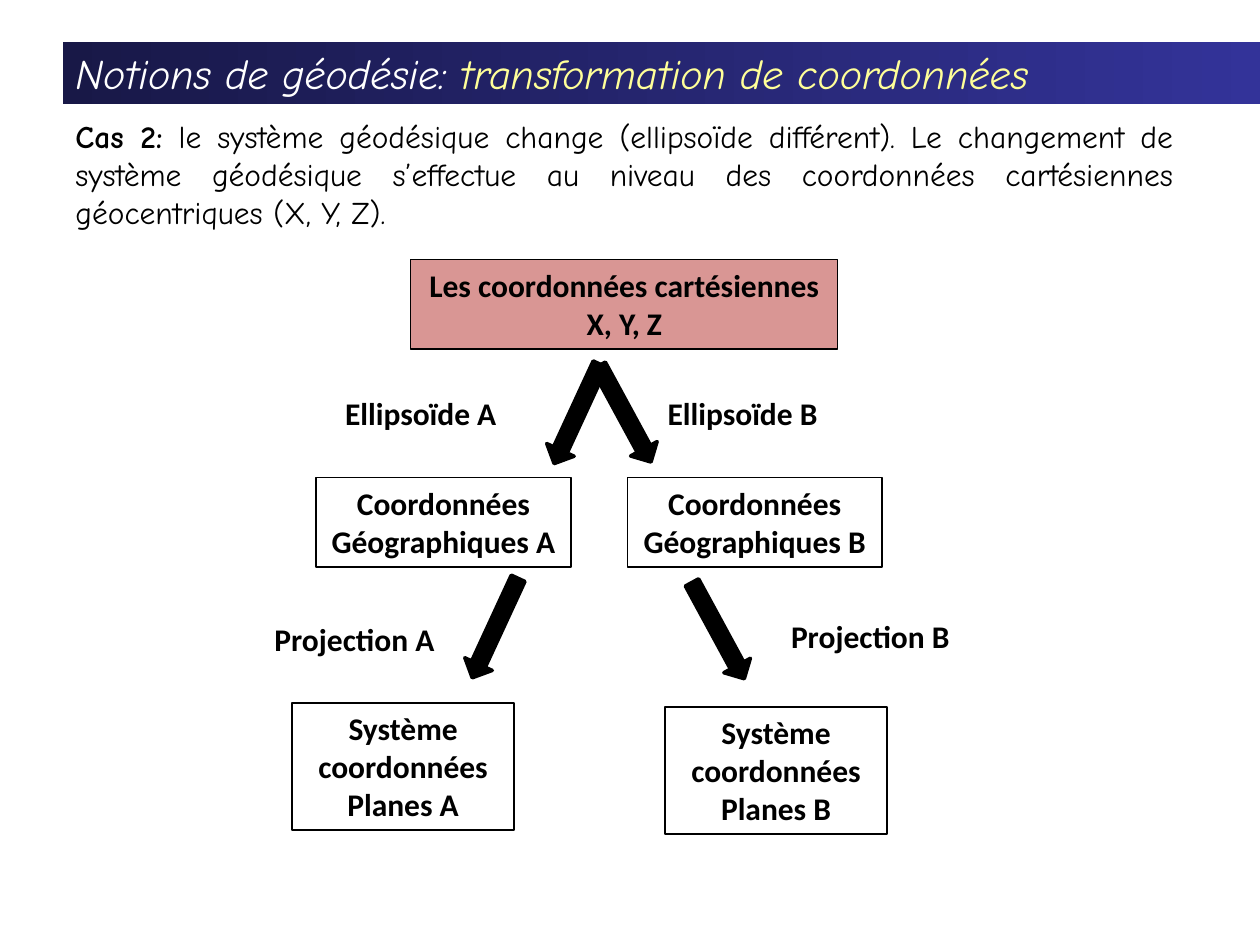
from dataclasses import dataclass

from pptx import Presentation
from pptx.dml.color import RGBColor
from pptx.enum.shapes import MSO_SHAPE
from pptx.enum.text import MSO_ANCHOR, MSO_AUTO_SIZE, PP_ALIGN
from pptx.util import Inches, Pt

RECTANGLE = MSO_SHAPE.RECTANGLE
DOWN_ARROW = MSO_SHAPE.DOWN_ARROW
TOP = MSO_ANCHOR.TOP
FIT_SHAPE = MSO_AUTO_SIZE.SHAPE_TO_FIT_TEXT
LEFT, CENTER, JUSTIFY = PP_ALIGN.LEFT, PP_ALIGN.CENTER, PP_ALIGN.JUSTIFY

COLORS = {
    "black": "000000",
    "white": "FFFFFF",
    "yellow": "FFFF99",
    "rose": "D99694",
    "navy": "181847",
    "indigo": "333399",
}
DIAGRAM_FONT = "Calibri"
COURSE_FONT = "Comic Neue"


@dataclass
class Span:
    text: str
    size: float = 18
    font: str = DIAGRAM_FONT
    color: str = "black"
    bold: bool = False
    italic: bool = False


@dataclass
class Box:
    left: float
    top: float
    width: float
    height: float
    lines: list[str]
    fill: str | None = None
    border: float = 1


@dataclass
class Label:
    left: float
    top: float
    text: str


@dataclass
class Arrow:
    left: float
    top: float
    rotation: float


BOXES = [
    Box(3.26, 2.06, 3.39, 0.71, ["Les coordonnées cartésiennes X, Y, Z"], "rose", 0.75),
    Box(2.51, 3.79, 2.02, 0.71, ["Coordonnées", "Géographiques A"]),
    Box(4.98, 3.79, 2.02, 0.71, ["Coordonnées", "Géographiques B"]),
    Box(2.32, 5.58, 1.76, 1.01, ["Système coordonnées", "Planes A"]),
    Box(5.28, 5.61, 1.76, 1.01, ["Système coordonnées", "Planes B"]),
]
LABELS = [
    Label(2.64, 3.08, "Ellipsoïde A"),
    Label(5.2, 3.08, "Ellipsoïde B"),
    Label(2.08, 4.87, "Projection A"),
    Label(6.18, 4.85, "Projection B"),
]
TOWARDS_A, TOWARDS_B = 24.8, 331.5
ARROWS = [
    Arrow(4.46, 2.85, TOWARDS_A),
    Arrow(4.84, 2.85, TOWARDS_B),
    Arrow(3.81, 4.55, TOWARDS_A),
    Arrow(5.58, 4.57, TOWARDS_B),
]
TITLE = [
    Span("Notions de géodésie: ", 24, COURSE_FONT, "white", italic=True),
    Span("transformation de coordonnées", 24, COURSE_FONT, "yellow", italic=True),
]
INTRODUCTION = [
    Span("Cas 2:", font=COURSE_FONT, bold=True),
    Span(
        " le système géodésique change (ellipsoïde différent). Le changement de "
        "système géodésique s’effectue au niveau des coordonnées cartésiennes "
        "géocentriques (X, Y, Z).",
        font=COURSE_FONT,
    ),
]


def rgb(name: str) -> RGBColor:
    return RGBColor.from_string(COLORS[name])


def write(shape, paragraphs: list[list[Span]], alignment) -> None:
    frame = shape.text_frame
    frame.word_wrap = True
    frame.auto_size = FIT_SHAPE
    frame.vertical_anchor = TOP
    for index, spans in enumerate(paragraphs):
        paragraph = frame.add_paragraph() if index else frame.paragraphs[0]
        paragraph.alignment = alignment
        for span in spans:
            run = paragraph.add_run()
            run.text = span.text
            run.font.size = Pt(span.size)
            run.font.name = span.font
            run.font.bold = span.bold
            run.font.italic = span.italic
            run.font.color.rgb = rgb(span.color)


def draw_box(slide, box: Box) -> None:
    rectangle = slide.shapes.add_shape(
        RECTANGLE, Inches(box.left), Inches(box.top), Inches(box.width), Inches(box.height)
    )
    rectangle.shadow.inherit = False
    if box.fill:
        rectangle.fill.solid()
        rectangle.fill.fore_color.rgb = rgb(box.fill)
    else:
        rectangle.fill.background()
    rectangle.line.color.rgb = rgb("black")
    rectangle.line.width = Pt(box.border)
    write(rectangle, [[Span(line, bold=True)] for line in box.lines], CENTER)


def draw_label(slide, label: Label) -> None:
    caption = slide.shapes.add_textbox(
        Inches(label.left), Inches(label.top), Inches(1.54), Inches(0.4)
    )
    write(caption, [[Span(label.text, bold=True)]], LEFT)


def draw_arrow(slide, arrow: Arrow) -> None:
    pointer = slide.shapes.add_shape(
        DOWN_ARROW, Inches(arrow.left), Inches(arrow.top), Inches(0.24), Inches(0.87)
    )
    pointer.rotation = arrow.rotation
    pointer.shadow.inherit = False
    pointer.fill.solid()
    pointer.fill.fore_color.rgb = rgb("black")
    pointer.line.color.rgb = rgb("black")
    pointer.line.width = Pt(2)


def draw_title(slide) -> None:
    banner = slide.shapes.add_shape(
        RECTANGLE, Inches(0.5), Inches(0.33), Inches(9.5), Inches(0.5)
    )
    banner.shadow.inherit = False
    banner.line.fill.background()
    banner.fill.gradient()
    banner.fill.gradient_angle = 0
    for position, (stop, color) in enumerate(
        zip(banner.fill.gradient_stops, ("navy", "indigo"))
    ):
        stop.position = position
        stop.color.rgb = rgb(color)
    write(banner, [TITLE], LEFT)


def draw_introduction(slide) -> None:
    introduction = slide.shapes.add_textbox(
        Inches(0.5), Inches(0.88), Inches(8.91), Inches(1.01)
    )
    write(introduction, [INTRODUCTION], JUSTIFY)


def main() -> None:
    presentation = Presentation()
    presentation.slide_width = Inches(10)
    presentation.slide_height = Inches(7.5)
    slide = presentation.slides.add_slide(presentation.slide_layouts[6])
    draw_title(slide)
    draw_introduction(slide)
    for box in BOXES:
        draw_box(slide, box)
    for label in LABELS:
        draw_label(slide, label)
    for arrow in ARROWS:
        draw_arrow(slide, arrow)
    presentation.save("out.pptx")


if __name__ == "__main__":
    main()
